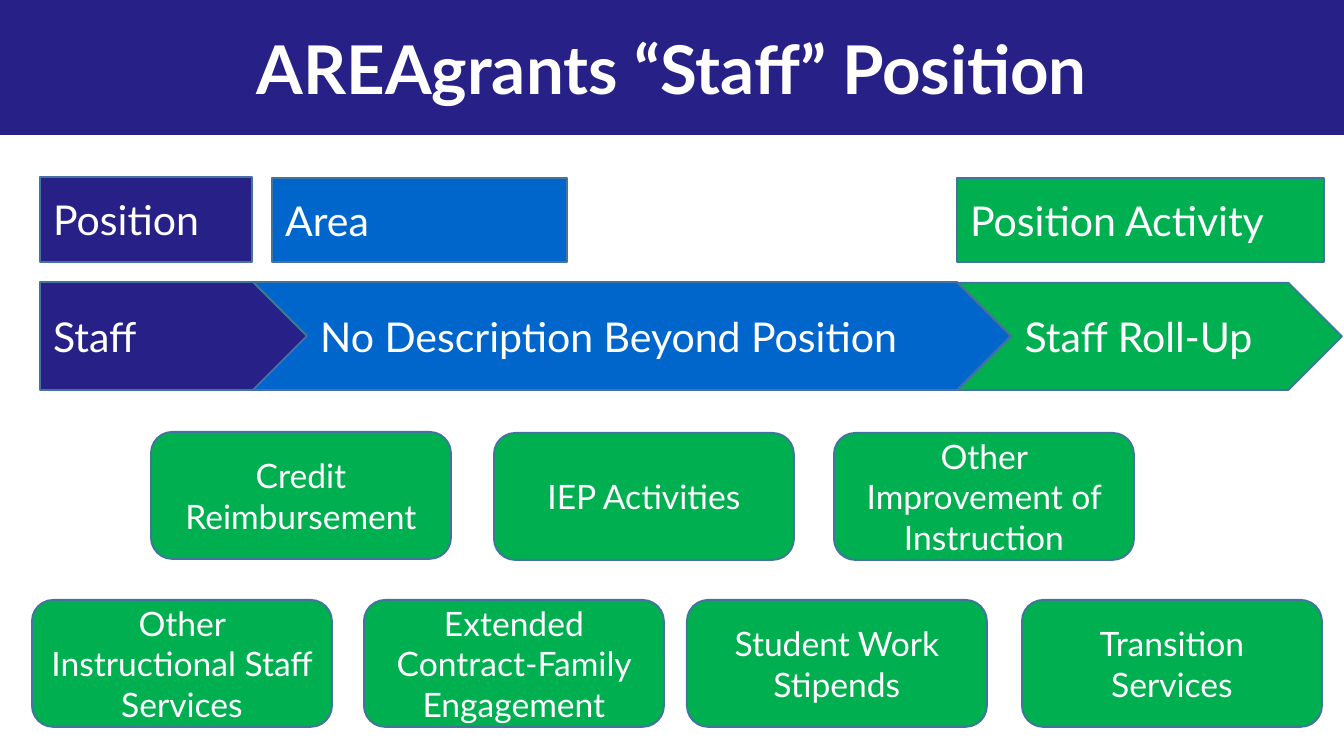
from pptx import Presentation
from pptx.dml.color import RGBColor
from pptx.enum.shapes import MSO_SHAPE
from pptx.enum.text import MSO_ANCHOR, MSO_AUTO_SIZE, PP_ALIGN
from pptx.util import Emu, Pt

RECTANGLE = MSO_SHAPE.RECTANGLE
ROUNDED = MSO_SHAPE.ROUNDED_RECTANGLE
PENTAGON = MSO_SHAPE.PENTAGON
CHEVRON = MSO_SHAPE.CHEVRON
MIDDLE = MSO_ANCHOR.MIDDLE
NO_FIT = MSO_AUTO_SIZE.NONE
LEFT, CENTER = PP_ALIGN.LEFT, PP_ALIGN.CENTER

FONT = "Lato"
NAVY, BLUE, GREEN = "262087", "0066CC", "00B050"
WHITE, OUTLINE = "FFFFFF", "43739E"
WIDTH, HEIGHT = 1344, 756
TITLE_HEIGHT = 135
ACTIVITY_WIDTH, ACTIVITY_HEIGHT = 300, 127

# Content: places and sizes in px
TITLE = "AREAgrants “Staff” Position"
HEADINGS = [  # text, fill, left, top, width, height
    ("Position", NAVY, 40, 177, 212, 85),
    ("Area", BLUE, 272, 178, 295, 84),
    ("Position Activity", GREEN, 957, 178, 367, 84),
]
STEPS = [  # text, fill, shape, left, top, width, height
    ("Staff", NAVY, PENTAGON, 40, 282, 269, 108),
    ("No Description Beyond Position", BLUE, CHEVRON, 253, 282, 758, 108),
    ("Staff Roll-Up", GREEN, CHEVRON, 958, 283, 384, 107),
]
ACTIVITIES = [  # text, left, top
    ("Credit Reimbursement", 151, 432),
    ("IEP Activities", 494, 433),
    ("Other Improvement of Instruction", 834, 433),
    ("Other Instructional Staff Services", 32, 600),
    ("Extended Contract-Family Engagement", 364, 600),
    ("Student Work Stipends", 687, 600),
    ("Transition Services", 1022, 600),
]


def px(length):
    return Emu(round(length * 914400 / 134.4))


def color(value):
    return RGBColor.from_string(value)


def write(shape, text, size, align, bold=False):
    frame = shape.text_frame
    frame.word_wrap = True
    frame.auto_size = NO_FIT
    frame.vertical_anchor = MIDDLE
    para = frame.paragraphs[0]
    para.alignment = align
    span = para.add_run()
    span.text = text
    span.font.name = FONT
    span.font.size = Pt(size)
    span.font.bold = bold
    span.font.color.rgb = color(WHITE)


def add_box(page, kind, text, fill, place, size, align):
    box = page.shapes.add_shape(kind, *map(px, place))
    box.shadow.inherit = False
    box.fill.solid()
    box.fill.fore_color.rgb = color(fill)
    box.line.color.rgb = color(OUTLINE)
    box.line.width = Pt(1)
    write(box, text, size, align)


def main():
    deck = Presentation()
    deck.slide_width, deck.slide_height = px(WIDTH), px(HEIGHT)
    page = deck.slides.add_slide(deck.slide_layouts[5])

    # Title band
    title = page.shapes.title
    title.left, title.top = px(0), px(0)
    title.width, title.height = px(WIDTH), px(TITLE_HEIGHT)
    title.fill.solid()
    title.fill.fore_color.rgb = color(NAVY)
    write(title, TITLE, 36, CENTER, bold=True)

    # Column headings
    for text, fill, *place in HEADINGS:
        add_box(page, RECTANGLE, text, fill, place, 22, LEFT)

    # Arrow band
    for text, fill, kind, *place in STEPS:
        add_box(page, kind, text, fill, place, 22, LEFT)

    # Activities
    for text, left, top in ACTIVITIES:
        place = (left, top, ACTIVITY_WIDTH, ACTIVITY_HEIGHT)
        add_box(page, ROUNDED, text, GREEN, place, 18, CENTER)

    deck.save("out.pptx")


if __name__ == "__main__":
    main()
